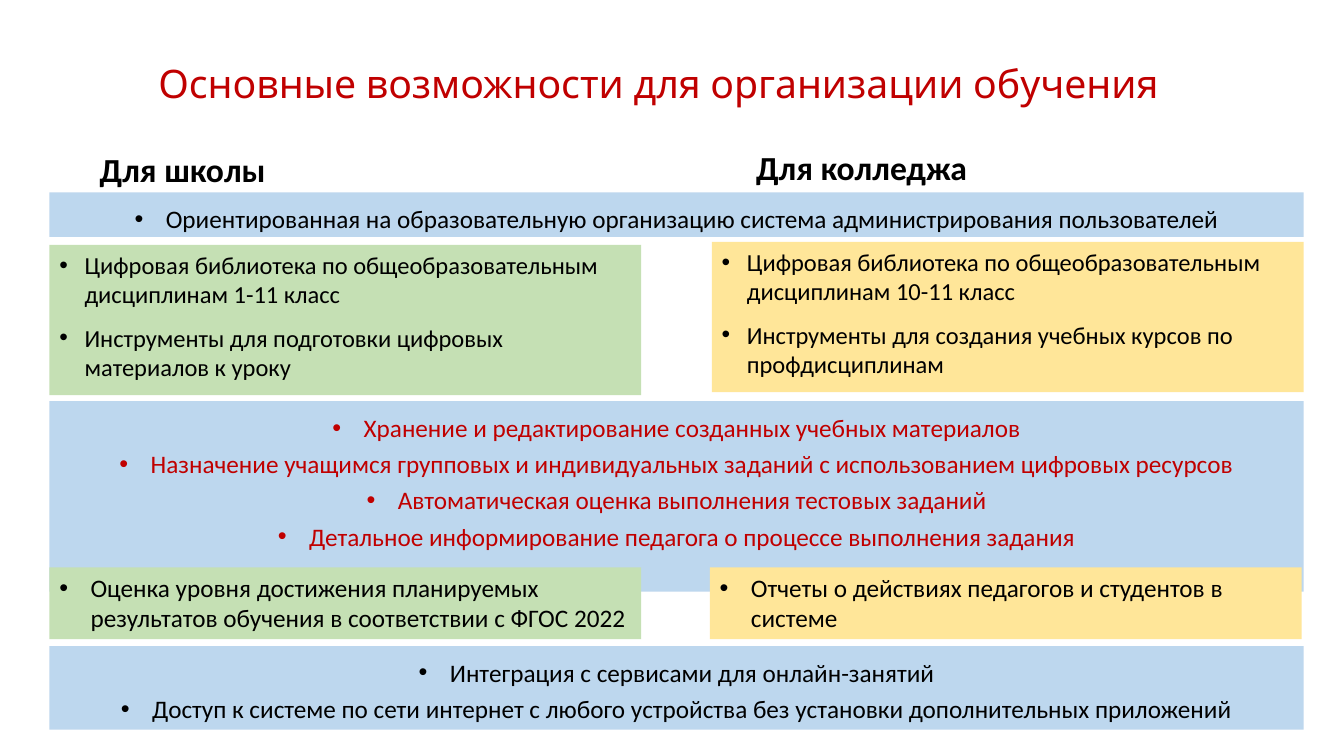
"""Builds a slide comparing learning features for schools and colleges."""
from lxml import etree
from pptx import Presentation
from pptx.dml.color import RGBColor
from pptx.enum.shapes import MSO_SHAPE
from pptx.enum.text import MSO_ANCHOR, PP_ALIGN
from pptx.oxml.ns import qn
from pptx.util import Inches, Pt

COLORS = {
    "red": "C00000",
    "black": "000000",
    "common": "BDD7EE",
    "school": "C5E0B4",
    "college": "FFE699",
}
LEFT, FULL_WIDTH, HALF_WIDTH = 0.49, 12.44, 5.87


def style(paragraph, size, color, font="Calibri", bold=False):
    paragraph.font.name = font
    paragraph.font.size = Pt(size)
    paragraph.font.bold = bold
    paragraph.font.color.rgb = RGBColor.from_string(COLORS[color])


def add_panel(box, fill, items, size=18, color="black", indent=0.31,
              align=PP_ALIGN.LEFT, spacing=1.0, gap=0):
    panel = slide.shapes.add_shape(MSO_SHAPE.RECTANGLE, *map(Inches, box))
    panel.shadow.inherit = False
    panel.fill.solid()
    panel.fill.fore_color.rgb = RGBColor.from_string(COLORS[fill])
    panel.line.fill.background()
    frame = panel.text_frame
    frame.word_wrap = True
    frame.vertical_anchor = MSO_ANCHOR.TOP
    for index, item in enumerate(items):
        paragraph = frame.add_paragraph() if index else frame.paragraphs[0]
        paragraph.text = item
        paragraph.alignment = align
        paragraph.line_spacing = spacing
        paragraph.space_before = Pt(gap if index else 0)
        properties = paragraph._p.get_or_add_pPr()
        properties.set("marL", str(Inches(indent)))
        properties.set("indent", str(-Inches(indent)))
        etree.SubElement(properties, qn("a:buFont"), typeface="Arial")
        etree.SubElement(properties, qn("a:buChar"), char="•")
        style(paragraph, size, color)


prs = Presentation()
prs.slide_width, prs.slide_height = Inches(13.33), Inches(7.5)
slide = prs.slides.add_slide(prs.slide_layouts[5])

title = slide.shapes.title
title.left, title.top = Inches(1.47), Inches(0.13)
title.width, title.height = Inches(10.95), Inches(1.45)
title.text_frame.text = "Основные возможности для организации обучения"
title.text_frame.vertical_anchor = MSO_ANCHOR.MIDDLE
heading = title.text_frame.paragraphs[0]
heading.alignment = PP_ALIGN.LEFT
heading.line_spacing = 0.9
style(heading, 28, "red", "League Spartan")

for left, top, audience in [(0.89, 1.03, "Для школы"), (7.4, 1.01, "Для колледжа")]:
    label = slide.shapes.add_textbox(Inches(left), Inches(top), Inches(5.65), Inches(0.9))
    label.text_frame.word_wrap = True
    label.text_frame.vertical_anchor = MSO_ANCHOR.BOTTOM
    label.text_frame.text = audience
    label.text_frame.paragraphs[0].line_spacing = 0.9
    style(label.text_frame.paragraphs[0], 24, "black", bold=True)

common_panels = [
    (1.91, 0.44, "black", [
        "Ориентированная на образовательную организацию система администрирования пользователей",
    ]),
    (3.98, 1.89, "red", [
        "Хранение и редактирование созданных учебных материалов",
        "Назначение учащимся групповых и индивидуальных заданий с использованием цифровых ресурсов",
        "Автоматическая оценка выполнения тестовых заданий",
        "Детальное информирование педагога о процессе выполнения задания",
    ]),
    (6.41, 0.83, "black", [
        "Интеграция с сервисами для онлайн-занятий",
        "Доступ к системе по сети интернет с любого устройства без установки дополнительных приложений",
    ]),
]
for top, height, color, features in common_panels:
    add_panel((LEFT, top, FULL_WIDTH, height), "common", features,
              color=color, align=PP_ALIGN.CENTER, spacing=1.2)

library_panels = [
    (LEFT, 2.43, "school", [
        "Цифровая библиотека по общеобразовательным дисциплинам 1-11 класс",
        "Инструменты для подготовки цифровых материалов к уроку",
    ]),
    (7.06, 2.4, "college", [
        "Цифровая библиотека по общеобразовательным дисциплинам 10-11 класс",
        "Инструменты для создания учебных курсов по профдисциплинам",
    ]),
]
for left, top, audience, features in library_panels:
    add_panel((left, top, HALF_WIDTH, 1.49), audience, features,
              size=17.5, indent=0.25, gap=10)

report_panels = [
    (LEFT, "school",
     "Оценка уровня достижения планируемых результатов обучения в соответствии с ФГОС 2022"),
    (7.04, "college", "Отчеты о действиях педагогов и студентов в системе"),
]
for left, audience, feature in report_panels:
    add_panel((left, 5.63, HALF_WIDTH, 0.71), audience, [feature])

prs.save("out.pptx")
